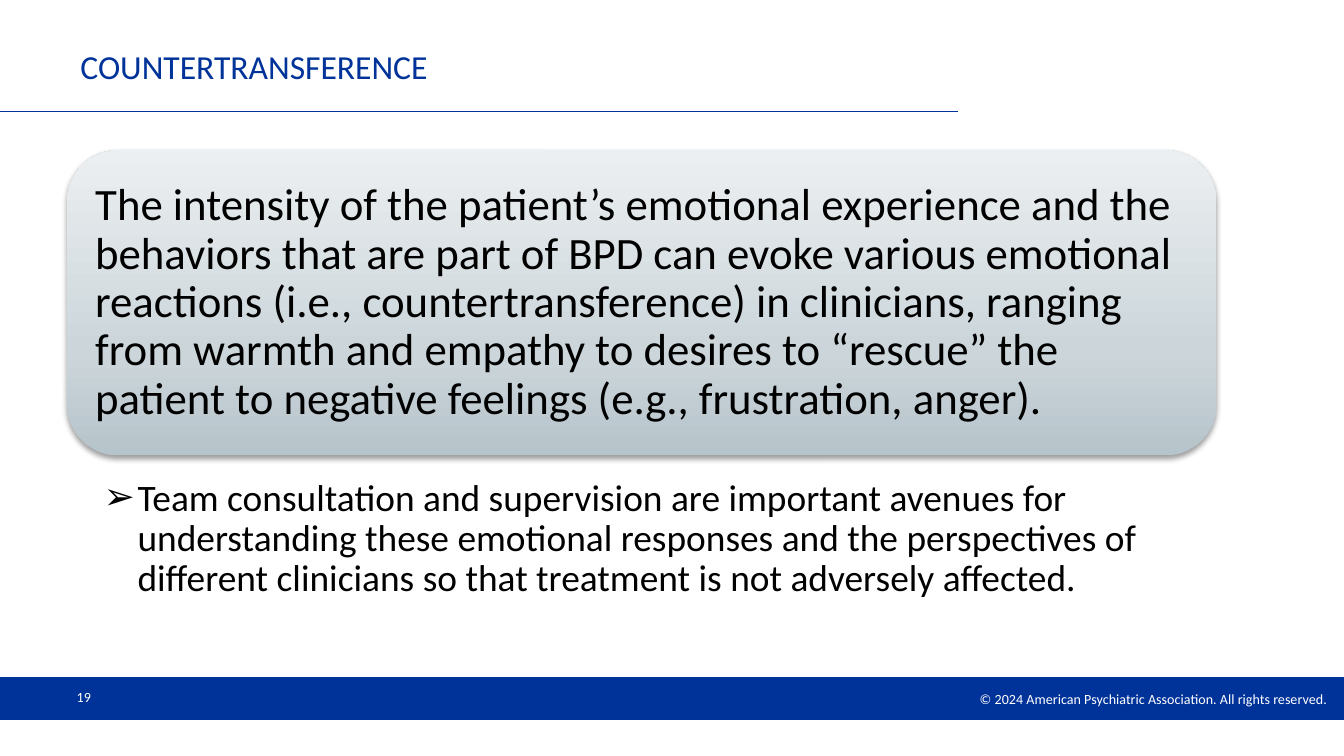
import copy

import pptx
import pptx.dml.color
import pptx.enum.shapes
import pptx.enum.text
import pptx.oxml
import pptx.oxml.ns
import pptx.util

Cm = pptx.util.Cm
Pt = pptx.util.Pt
RGB = pptx.dml.color.RGBColor
Align = pptx.enum.text.PP_ALIGN
Anchor = pptx.enum.text.MSO_ANCHOR
Shape = pptx.enum.shapes.MSO_SHAPE
qn = pptx.oxml.ns.qn

NAVY = RGB(0x00, 0x33, 0x99)
WHITE = RGB(0xFF, 0xFF, 0xFF)
BLACK = RGB(0x00, 0x00, 0x00)
SLATE = RGB(0xB6, 0xC4, 0xCB)
MIST = RGB(0xCC, 0xD6, 0xDA)
PALE = RGB(0xEC, 0xEF, 0xF1)
STOPS = [(0, SLATE), (0.35, MIST), (1, PALE)]

WIDE, HIGH = 25.4, 14.29
LEFT = 1.27
INSET = (0.25, 0.13, 0.25, 0.13)


def node(tag, attrs="", inner=""):
    space = pptx.oxml.ns.nsdecls("a")
    return pptx.oxml.parse_xml(f"<a:{tag} {space} {attrs}>{inner}</a:{tag}>")


def place(shape, box):
    shape.left, shape.top, shape.width, shape.height = map(Cm, box)


def write(shape, text, size, color=BLACK, align=Align.LEFT,
          anchor=Anchor.MIDDLE, inset=INSET, line=1.0, bullet=None):
    frame = shape.text_frame
    frame.word_wrap = True
    frame.auto_size = pptx.enum.text.MSO_AUTO_SIZE.NONE
    frame.vertical_anchor = anchor
    (frame.margin_left, frame.margin_top,
     frame.margin_right, frame.margin_bottom) = map(Cm, inset)
    frame.text = text
    para = frame.paragraphs[0]
    para.alignment = align
    para.line_spacing = line
    para.space_before = Pt(0)
    if bullet:
        para.level = 1
        props = para._p.get_or_add_pPr()
        props.set("marL", str(Cm(0.64)))
        props.set("indent", str(-Cm(0.64)))
        props.append(node("buChar", f'char="{bullet}"'))
    font = para.runs[0].font
    font.name, font.size = "Calibri", Pt(size)
    font.color.rgb = color


def shade(shape):
    """Three-stop upward gradient and a soft shadow below."""
    shape.fill.gradient()
    shape.fill.gradient_angle = 90
    props = shape._element.spPr
    stops = props.find(".//" + qn("a:gsLst"))
    stops.append(copy.deepcopy(stops[-1]))
    for stop, (pos, color) in zip(shape.fill.gradient_stops, STOPS):
        stop.position = pos
        stop.color.rgb = color
    shape.shadow.inherit = False
    props.find(qn("a:effectLst")).append(node(
        "outerShdw",
        f'blurRad="{Pt(3.1)}" dist="{Pt(1.6)}" dir="5400000" rotWithShape="0"',
        '<a:srgbClr val="000000"><a:alpha val="38000"/></a:srgbClr>'))


def footer(slide, box):
    x, y, w, h = box
    # Band
    band = slide.shapes.add_shape(Shape.RECTANGLE, *map(Cm, box))
    band.shadow.inherit = False
    band.fill.solid()
    band.fill.fore_color.rgb = NAVY
    band.line.fill.background()
    # Rights line and page number
    rights = slide.shapes.add_textbox(*map(Cm, (x + w - 11.1, y + 0.13, 11.1, 0.58)))
    write(rights, "© 2024 American Psychiatric Association. All rights reserved.",
          7.5, WHITE, Align.RIGHT, inset=(0.25, 0.13, 0.32, 0.13))
    page = slide.shapes.add_textbox(*map(Cm, (x + LEFT, y, 5.92, 0.76)))
    write(page, "19", 7.5, WHITE, inset=(0.18, 0.1, 0.18, 0.1))


def header(slide, box):
    x, y, w, h = box
    # Title
    title = slide.shapes.title
    place(title, (x + LEFT, y, w - LEFT, 1.22))
    write(title, "COUNTERTRANSFERENCE", 18, NAVY)
    # Rule under the title
    rule = slide.shapes.add_connector(
        pptx.enum.shapes.MSO_CONNECTOR.STRAIGHT,
        *map(Cm, (x, y + h, x + w, y + h)))
    rule.line.color.rgb = NAVY
    rule.line.width = Pt(0.75)
    rule._element.spPr.append(node("effectLst"))


def panel(slide, box):
    card = slide.shapes.add_shape(Shape.ROUNDED_RECTANGLE, *map(Cm, box))
    card.line.fill.background()
    shade(card)
    # Text sits in its own box inside the card
    x, y, w, h = box
    gap = 0.28
    note = slide.shapes.add_textbox(
        *map(Cm, (x + gap, y + gap, w - 2 * gap, h - 2 * gap)))
    write(note, "The intensity of the patient’s emotional experience and the "
          "behaviors that are part of BPD can evoke various emotional reactions "
          "(i.e., countertransference) in clinicians, ranging from warmth and "
          "empathy to desires to “rescue” the patient to negative feelings "
          "(e.g., frustration, anger).", 24, inset=(0.25,) * 4, line=0.9)


def advice(slide, box):
    body = slide.placeholders[1]
    place(body, box)
    write(body, "Team consultation and supervision are important avenues for "
          "understanding these emotional responses and the perspectives of "
          "different clinicians so that treatment is not adversely affected.",
          20, anchor=Anchor.TOP, inset=(0.69, 0.08, 0.41, 0.08), line=0.9,
          bullet="➢")


def main():
    deck = pptx.Presentation()
    deck.slide_width, deck.slide_height = Cm(WIDE), Cm(HIGH)
    slide = deck.slides.add_slide(deck.slide_layouts[1])
    footer(slide, (0, 12.8, WIDE, 0.81))
    header(slide, (0, 0.64, 18.11, 1.47))
    panel(slide, (LEFT, 2.84, 21.72, 5.77))
    advice(slide, (LEFT, 8.97, 21.72, 3.05))
    deck.save("out.pptx")


if __name__ == "__main__":
    main()
